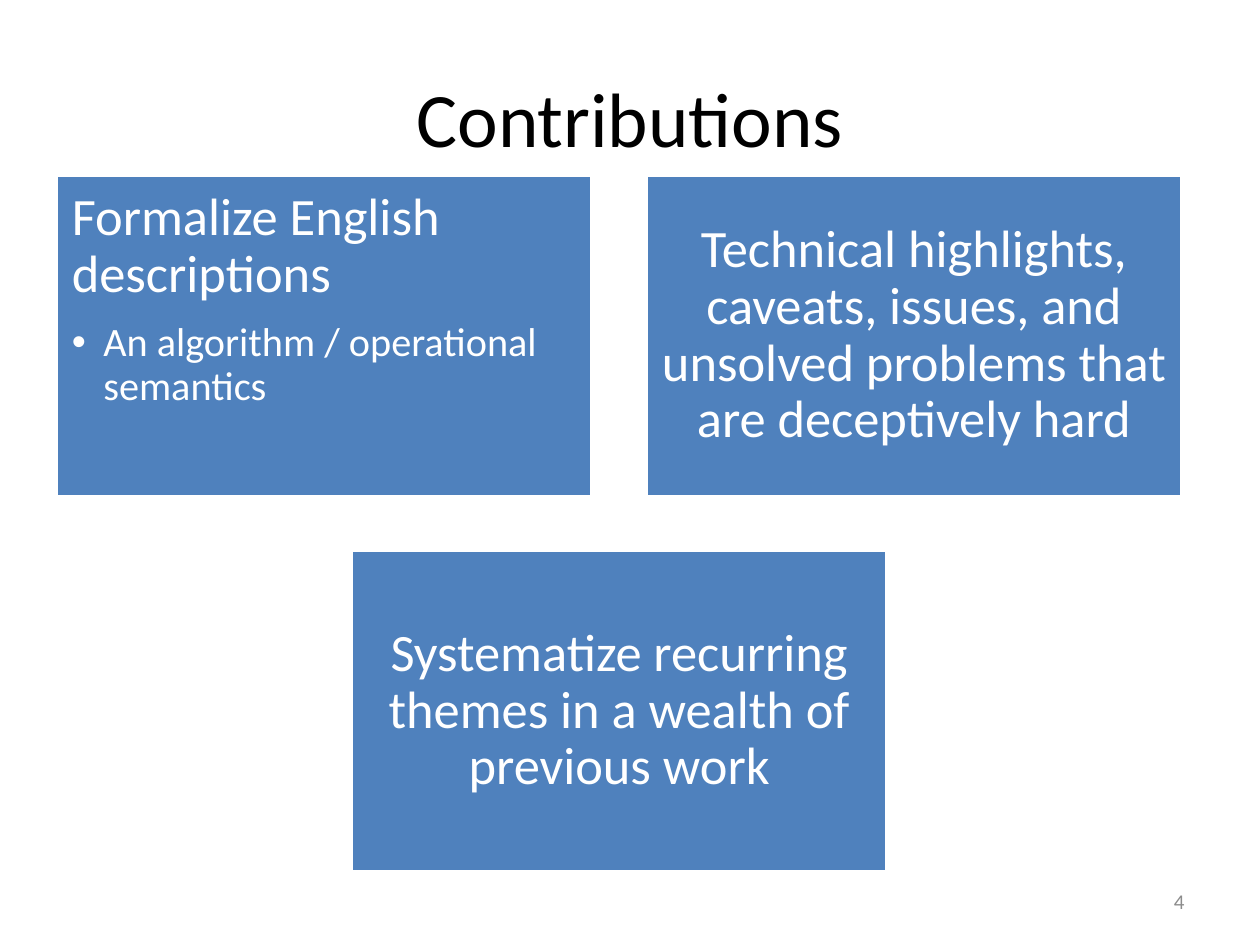
from lxml.etree import SubElement
from pptx import Presentation
from pptx.dml.color import RGBColor
from pptx.enum.shapes import MSO_SHAPE as Shape
from pptx.enum.text import MSO_ANCHOR as Anchor, PP_ALIGN as Align
from pptx.oxml.ns import qn
from pptx.util import Inches, Pt

FONT = "Calibri"
WHITE = "FFFFFF"
BLUE = "4F81BD"
CARD_WIDTH, CARD_HEIGHT = 4.25, 2.55
CARD_LEFT, CARD_TOP, GAP = 0.45, 1.39, 0.43
CARD_PADDING = 0.12


def color(hex_value):
    return RGBColor.from_string(hex_value)


def apply(target, values):
    for name, value in values.items():
        setattr(target, name, value)


def write(paragraph, words, size, hex_value, **layout):
    run = paragraph.add_run()
    run.text = words
    apply(run.font, {"name": FONT, "size": Pt(size)})
    run.font.color.rgb = color(hex_value)
    apply(paragraph, layout)


def add_label(slide, box, words, size, hex_value, align):
    frame = slide.shapes.add_textbox(*map(Inches, box)).text_frame
    apply(frame, {"word_wrap": True, "vertical_anchor": Anchor.MIDDLE})
    write(frame.paragraphs[0], words, size, hex_value, alignment=align)


def add_bullet(paragraph, indent):
    props = paragraph._p.get_or_add_pPr()
    props.set("marL", str(Inches(indent)))
    props.set("indent", str(Inches(-indent)))
    SubElement(props, qn("a:buFont"), typeface="Arial")
    SubElement(props, qn("a:buChar"), char="•")


def add_card(slide, left, top, heading, detail=None):
    box = map(Inches, (left, top, CARD_WIDTH, CARD_HEIGHT))
    card = slide.shapes.add_shape(Shape.RECTANGLE, *box)
    card.shadow.inherit = False
    card.fill.solid()
    card.fill.fore_color.rgb = color(BLUE)
    card.line.color.rgb = color(WHITE)
    card.line.width = Pt(2)

    frame = card.text_frame
    sides = ("left", "top", "right", "bottom")
    apply(frame, {f"margin_{side}": Inches(CARD_PADDING) for side in sides})
    apply(frame, {
        "word_wrap": True,
        "vertical_anchor": Anchor.TOP if detail else Anchor.MIDDLE,
    })
    write(frame.paragraphs[0], heading, 30, WHITE, line_spacing=0.9,
          space_after=Pt(10.5),
          alignment=Align.LEFT if detail else Align.CENTER)
    if detail:
        bullet = frame.add_paragraph()
        write(bullet, detail, 23, WHITE, line_spacing=0.9,
              space_after=Pt(3.5), alignment=Align.LEFT, level=1)
        add_bullet(bullet, 0.25)


def main():
    deck = Presentation()
    apply(deck, {"slide_width": Inches(10), "slide_height": Inches(7.5)})
    slide = deck.slides.add_slide(deck.slide_layouts[6])

    add_label(slide, (0.5, 0.3, 9, 1.25), "Contributions", 44, "000000",
              Align.CENTER)

    column_step = CARD_WIDTH + GAP
    lower_top = CARD_TOP + CARD_HEIGHT + GAP
    add_card(slide, CARD_LEFT, CARD_TOP, "Formalize English descriptions",
             "An algorithm / operational semantics")
    add_card(slide, CARD_LEFT + column_step, CARD_TOP,
             "Technical highlights, caveats, issues, and unsolved problems "
             "that are deceptively hard")
    add_card(slide, CARD_LEFT + column_step / 2, lower_top,
             "Systematize recurring themes in a wealth of previous work")

    add_label(slide, (7.17, 6.95, 2.33, 0.4), "4", 12, "8C8C8C", Align.RIGHT)
    deck.save("out.pptx")


if __name__ == "__main__":
    main()
